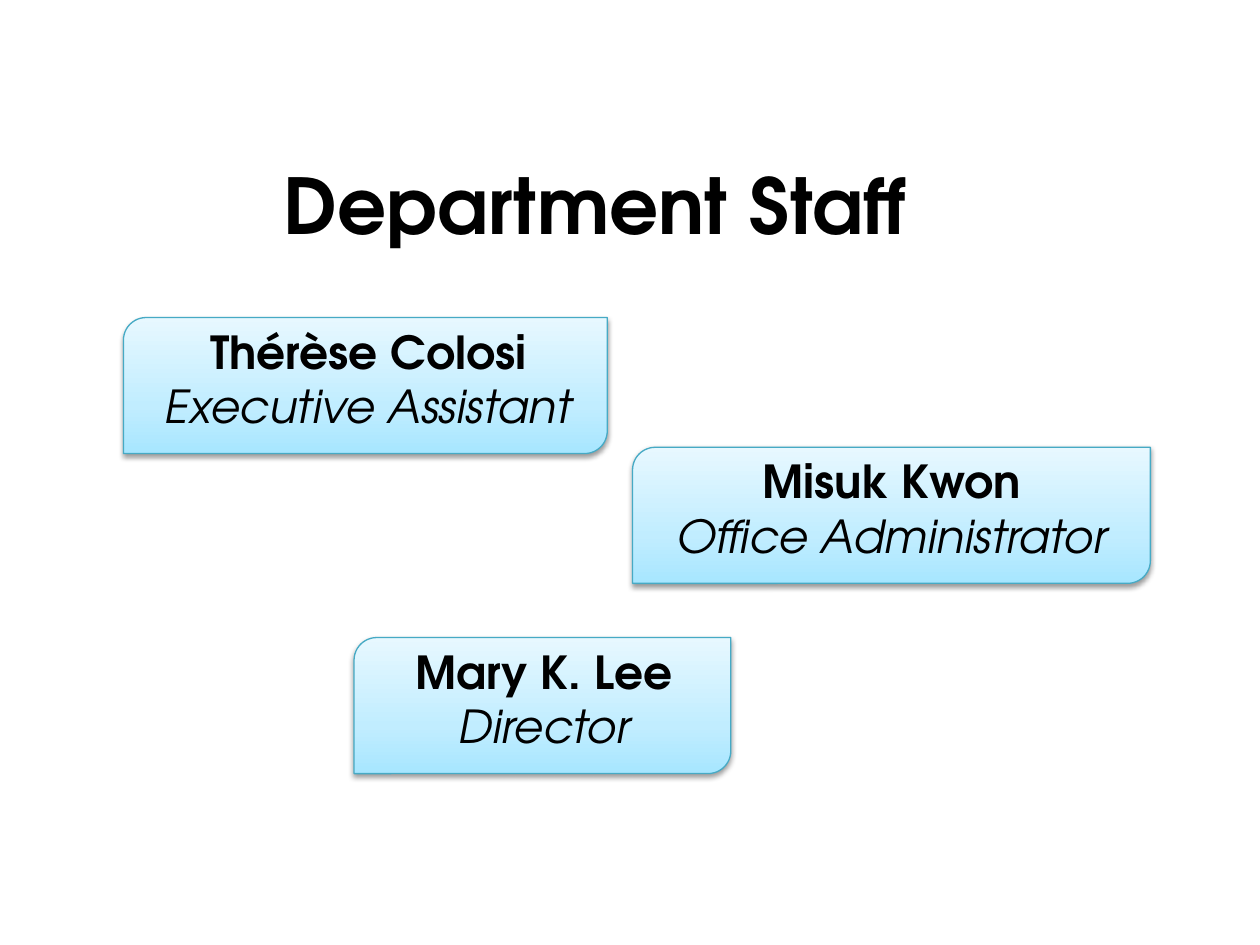
import copy

import pptx
import pptx.dml.color
import pptx.enum.shapes
import pptx.enum.text
import pptx.oxml
import pptx.oxml.ns
import pptx.util

Pt = pptx.util.Pt
RGBColor = pptx.dml.color.RGBColor
SHAPE = pptx.enum.shapes.MSO_SHAPE
ANCHOR = pptx.enum.text.MSO_ANCHOR
AUTO_SIZE = pptx.enum.text.MSO_AUTO_SIZE
ALIGN = pptx.enum.text.PP_ALIGN
qn = pptx.oxml.ns.qn

BLACK = RGBColor(0x00, 0x00, 0x00)
TEAL = RGBColor(0x46, 0xAA, 0xC5)
SKY = RGBColor(0xA7, 0xE6, 0xFF)
PALE = RGBColor(0xC1, 0xED, 0xFF)
ICE = RGBColor(0xE7, 0xF8, 0xFF)
GRADIENT = [(0, SKY), (0.35, PALE), (1, ICE)]
FONT = "TeX Gyre Adventor"
SHADOW = (
    f'<a:outerShdw {pptx.oxml.ns.nsdecls("a")} blurRad="{Pt(3.1)}" '
    f'dist="{Pt(1.6)}" dir="5400000" rotWithShape="0">'
    '<a:srgbClr val="000000"><a:alpha val="38000"/></a:srgbClr></a:outerShdw>'
)
CARD_HEIGHT = 77.76
LABEL_HEIGHT = 70.56

STAFF = [
    ("Mary K. Lee", "Director", 364.32, (202.32, 215.28), (229.68, 162.72)),
    ("Misuk Kwon", "Office Administrator", 255.6, (361.44, 295.92), (373.68, 272.16)),
    ("Thérèse Colosi", "Executive Assistant", 181.44, (70.56, 276.48), (82.8, 255.6)),
]


class StaffSlide:
    def __init__(self, prs):
        self.s = prs.slides.add_slide(prs.slide_layouts[6])

    def card(self, x, y, w, h):
        sp = self.s.shapes.add_shape(
            SHAPE.ROUND_2_DIAG_RECTANGLE, Pt(x), Pt(y), Pt(w), Pt(h))
        sp.fill.gradient()
        sp.fill.gradient_angle = 90
        spPr = sp._element.spPr
        stops = spPr.find(qn("a:gradFill")).find(qn("a:gsLst"))
        stops.append(copy.deepcopy(stops[-1]))
        for stop, (position, color) in zip(sp.fill.gradient_stops, GRADIENT):
            stop.position = position
            stop.color.rgb = color
        sp.line.color.rgb = TEAL
        sp.line.width = Pt(0.75)
        sp.shadow.inherit = False
        spPr.find(qn("a:effectLst")).append(pptx.oxml.parse_xml(SHADOW))

    def text(self, x, y, w, h, lines, size):
        sp = self.s.shapes.add_textbox(Pt(x), Pt(y), Pt(w), Pt(h))
        tf = sp.text_frame
        tf.text = "\n".join(lines)
        for i, p in enumerate(tf.paragraphs):
            p.alignment = ALIGN.CENTER
            for r in p.runs:
                r.font.name = FONT
                r.font.size = Pt(size)
                r.font.color.rgb = BLACK
                r.font.bold = i == 0
                r.font.italic = i > 0
        return tf

    def title(self, x, y, w, h, text):
        tf = self.text(x, y, w, h, [text], 44)
        tf.word_wrap = True
        tf.vertical_anchor = ANCHOR.MIDDLE

    def label(self, x, y, w, h, name, role):
        tf = self.text(x, y, w, h, [name, role], 26)
        tf.word_wrap = False
        tf.auto_size = AUTO_SIZE.SHAPE_TO_FIT_TEXT


def main():
    prs = pptx.Presentation()
    prs.slide_width, prs.slide_height = Pt(720), Pt(540)
    slide = StaffSlide(prs)
    for name, role, y, (x, w), _ in STAFF:
        slide.card(x, y, w, CARD_HEIGHT)
    slide.title(54, 45.36, 572.4, 141.84, "Department Staff")
    for name, role, y, _, (x, w) in reversed(STAFF):
        slide.label(x, y, w, LABEL_HEIGHT, name, role)
    prs.save("out.pptx")


if __name__ == "__main__":
    main()
